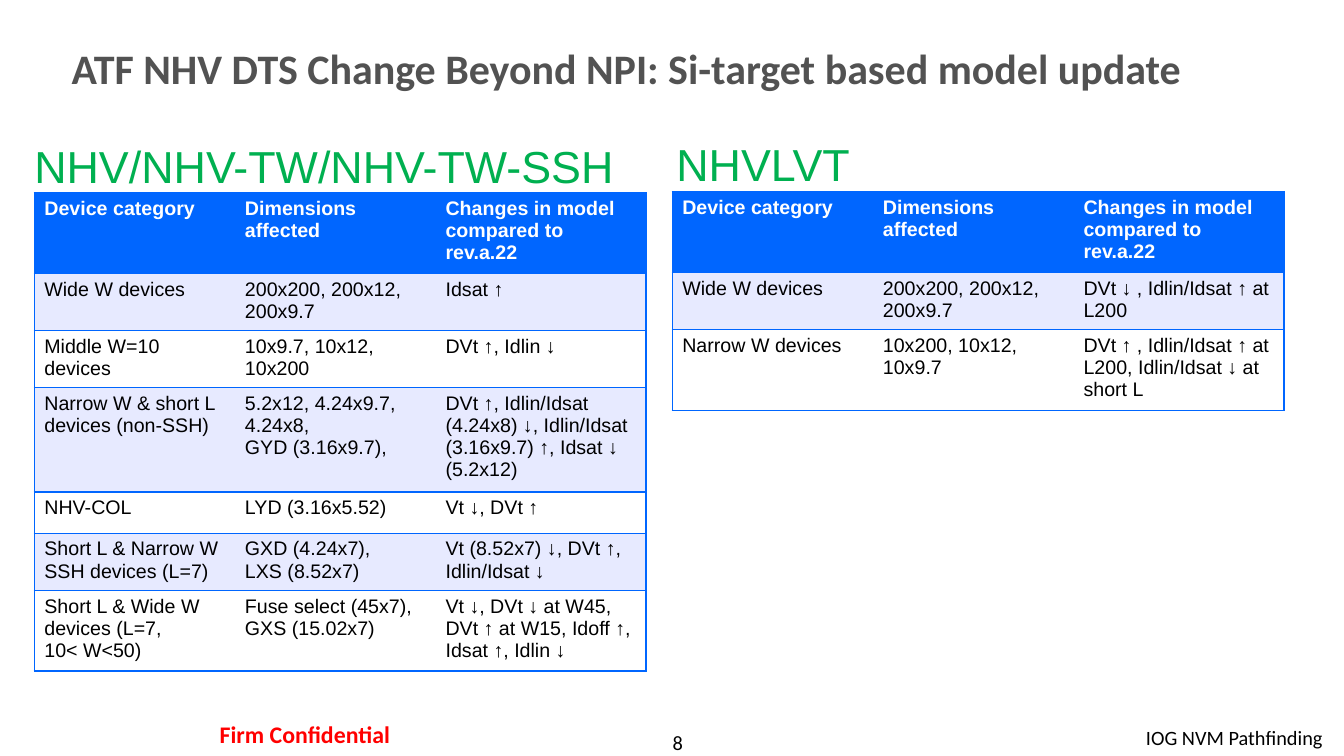
from lxml import etree
from pptx import Presentation
from pptx.dml.color import RGBColor
from pptx.enum.text import MSO_ANCHOR, PP_ALIGN
from pptx.oxml.ns import qn
from pptx.util import Pt

LEFT, MID, RIGHT = PP_ALIGN.LEFT, PP_ALIGN.CENTER, PP_ALIGN.RIGHT
TOP, CENTER = MSO_ANCHOR.TOP, MSO_ANCHOR.MIDDLE

BLUE = RGBColor(0x00, 0x66, 0xFF)
PALE = RGBColor(0xE7, 0xEA, 0xFF)
WHITE = RGBColor(0xFF, 0xFF, 0xFF)
BLACK = RGBColor(0x00, 0x00, 0x00)
GRAY = RGBColor(0x52, 0x52, 0x52)
GREEN = RGBColor(0x00, 0xB0, 0x50)
RED = RGBColor(0xFF, 0x00, 0x00)

WIDTHS = (143.3, 143.3, 150.4)
HEADER = (3, "Device category", "Dimensions affected",
          "Changes in model compared to rev.a.22")
NHV = [
    HEADER,
    (2, "Wide W devices", "200x200, 200x12, 200x9.7", "Idsat ↑"),
    (2, "Middle W=10 devices", "10x9.7, 10x12, 10x200", "DVt ↑, Idlin ↓"),
    (4, "Narrow W & short L devices (non-SSH)",
     "5.2x12, 4.24x9.7, 4.24x8,\nGYD (3.16x9.7),",
     "DVt ↑, Idlin/Idsat (4.24x8) ↓, Idlin/Idsat (3.16x9.7) ↑, Idsat ↓ (5.2x12)"),
    (1, "NHV-COL", "LYD (3.16x5.52)", "Vt ↓, DVt ↑"),
    (2, "Short L & Narrow W SSH devices (L=7)", "GXD (4.24x7),\nLXS (8.52x7)",
     "Vt (8.52x7) ↓, DVt ↑, Idlin/Idsat ↓"),
    (3, "Short L & Wide W devices (L=7,\n10< W<50)",
     "Fuse select (45x7),\nGXS (15.02x7)",
     "Vt ↓, DVt ↓ at W45, DVt ↑ at W15, Idoff ↑, Idsat ↑, Idlin ↓"),
]
LVT = [
    HEADER,
    (2, "Wide W devices", "200x200, 200x12, 200x9.7",
     "DVt ↓ , Idlin/Idsat ↑ at L200"),
    (3, "Narrow W devices", "10x200, 10x12, 10x9.7",
     "DVt ↑ , Idlin/Idsat ↑ at L200, Idlin/Idsat ↓ at short L"),
]


def style(frame, face, size, color, bold=False, align=LEFT):
    for para in frame.paragraphs:
        para.alignment = align
        for run in para.runs:
            font = run.font
            font.name = face
            font.size = Pt(size)
            font.bold = bold
            font.color.rgb = color


def add_text(slide, box, text, face, size, color, bold=False, align=LEFT,
             anchor=TOP, inset=(0, 0)):
    frame = slide.shapes.add_textbox(*map(Pt, box)).text_frame
    frame.word_wrap = True
    frame.vertical_anchor = anchor
    frame.margin_left = frame.margin_right = Pt(inset[0])
    frame.margin_top = frame.margin_bottom = Pt(inset[1])
    frame.text = text
    style(frame, face, size, color, bold, align)


def add_edge(cell, side, shown):
    edge = etree.SubElement(cell._tc.get_or_add_tcPr(), qn("a:ln" + side))
    if shown:
        edge.set("w", str(Pt(1)))
        fill = etree.SubElement(edge, qn("a:solidFill"))
        etree.SubElement(fill, qn("a:srgbClr")).set("val", str(BLUE))
    else:
        edge.set("w", "0")
        etree.SubElement(edge, qn("a:noFill"))


def fill_cell(cell, text, row, col):
    sides = {"L": col == 0, "R": col == len(WIDTHS) - 1, "T": True, "B": True}
    for side, shown in sides.items():
        add_edge(cell, side, shown)
    head = row == 0
    cell.fill.solid()
    cell.fill.fore_color.rgb = BLUE if head else PALE if row % 2 else WHITE
    cell.text_frame.text = text
    style(cell.text_frame, "Arial", 14, WHITE if head else BLACK, head)


def add_grid(slide, left, top, data):
    heights = [max(29.4, 7.2 + 15.75 * row[0]) for row in data]
    grid = slide.shapes.add_table(len(data), len(WIDTHS), Pt(left), Pt(top),
                                  Pt(sum(WIDTHS)), Pt(sum(heights))).table
    for col, width in enumerate(WIDTHS):
        grid.columns[col].width = Pt(width)
    for row, (lines, *texts) in enumerate(data):
        grid.rows[row].height = Pt(heights[row])
        for col, text in enumerate(texts):
            fill_cell(grid.cell(row, col), text, row, col)


def main():
    deck = Presentation()
    deck.slide_width, deck.slide_height = Pt(960), Pt(540)
    slide = deck.slides.add_slide(deck.slide_layouts[6])

    add_text(slide, (400.3, 521.3, 167.8, 17.3), "8", "Calibri", 14.5, BLACK,
             align=MID)
    add_text(slide, (635.8, 514.8, 316, 25.2), "IOG NVM Pathfinding",
             "Calibri", 14.5, BLACK, align=RIGHT, inset=(7.2, 3.6))
    add_text(slide, (111.6, 509.8, 212.4, 29.5), "Firm Confidential",
             "Calibri", 17, RED, True, MID, inset=(8.6, 4.3))
    add_text(slide, (14.4, 10.8, 866.9, 74.9),
             "ATF NHV DTS Change Beyond NPI: Si-target based model update",
             "Calibri", 30, GRAY, True, MID, CENTER)

    add_grid(slide, 24.5, 137.6, NHV)
    add_text(slide, (24.5, 98.8, 430.6, 34.6), "NHV/NHV-TW/NHV-TW-SSH",
             "Arial", 32, GREEN)
    add_grid(slide, 480.2, 136.8, LVT)
    add_text(slide, (483.1, 97.4, 430.6, 34.6), "NHVLVT", "Arial", 32, GREEN)

    deck.save("out.pptx")


if __name__ == "__main__":
    main()
